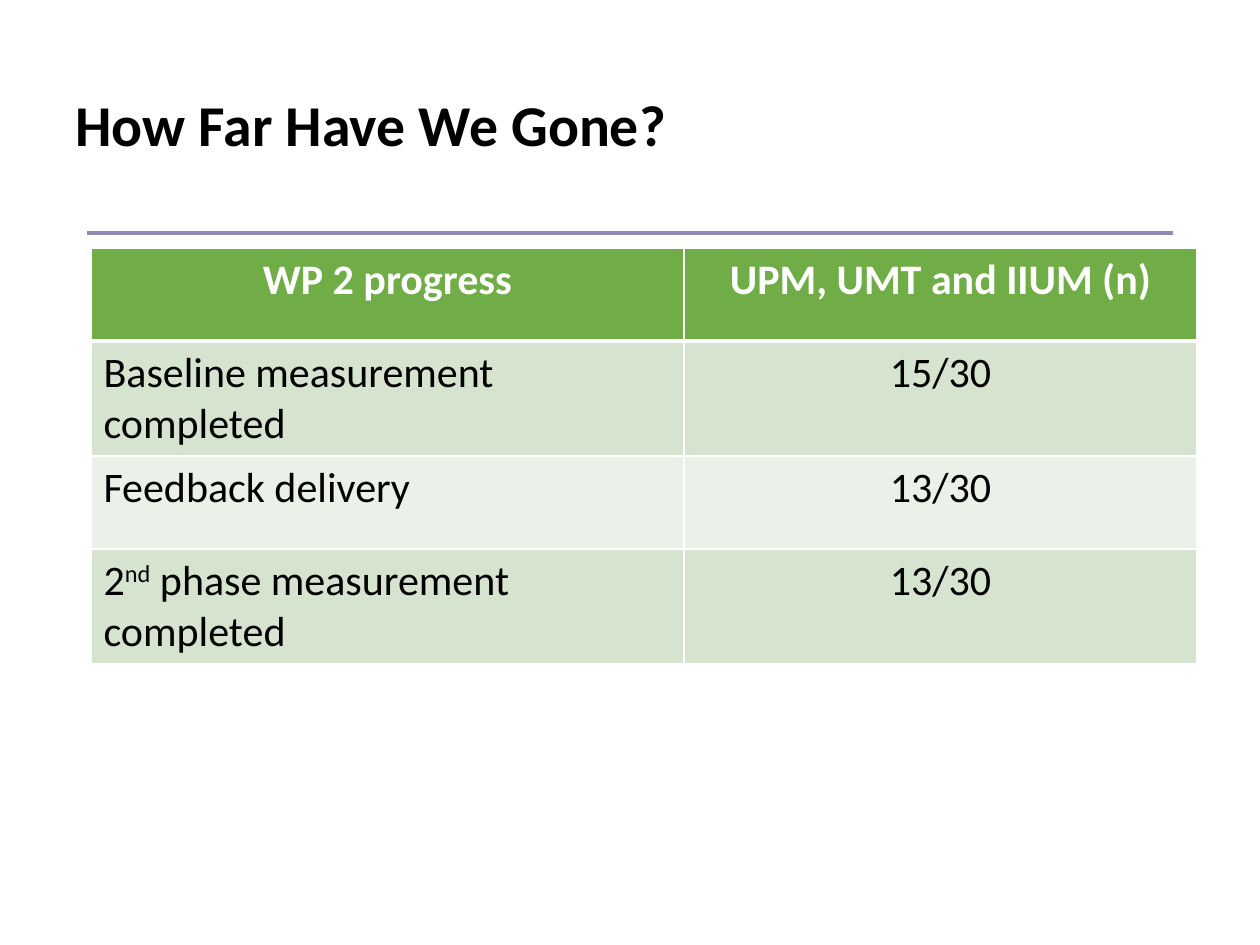
from lxml.etree import SubElement
from pptx import Presentation
from pptx.dml.color import RGBColor
from pptx.enum.shapes import MSO_CONNECTOR
from pptx.enum.text import MSO_ANCHOR, PP_ALIGN
from pptx.oxml.ns import qn
from pptx.util import Pt

SCALE = 914400 / 126
BLACK = RGBColor(0x00, 0x00, 0x00)
WHITE = RGBColor(0xFF, 0xFF, 0xFF)
GREEN = RGBColor(0x70, 0xAD, 0x47)
SAGE = RGBColor(0xD5, 0xE3, 0xCF)
PALE = RGBColor(0xEB, 0xF1, 0xE9)
MAUVE = RGBColor(0x8D, 0x8D, 0xB4)

ROWS = [
    (["WP 2 progress"], ["UPM, UMT and IIUM (n)"]),
    (["Baseline measurement completed"], ["15/30"]),
    (["Feedback delivery"], ["13/30"]),
    (["2", "nd", " phase measurement completed"], ["13/30"]),
]


def px(n):
    return round(n * SCALE)


def write(frame, parts, size=24, color=BLACK, bold=False,
          align=PP_ALIGN.LEFT, lead=None):
    para = frame.paragraphs[0]
    para.alignment = align
    if lead:
        para.line_spacing = lead
    for part in parts:
        run = para.add_run()
        run.text = part
        font = run.font
        font.name = "Calibri"
        font.size = Pt(size)
        font.bold = bold
        font.color.rgb = color
        if part == "nd":
            run._r.get_or_add_rPr().set("baseline", "30000")


def add_title(slide):
    title = slide.shapes.title
    title.left, title.top = px(63), px(93)
    title.width, title.height = px(1134), px(69)
    frame = title.text_frame
    frame.vertical_anchor = MSO_ANCHOR.MIDDLE
    write(frame, ["How Far Have We Gone?"], size=33, bold=True, lead=0.9)


def add_rule(slide):
    rule = slide.shapes.add_connector(
        MSO_CONNECTOR.STRAIGHT, px(87), px(233), px(1173), px(233))
    rule.line.color.rgb = MAUVE
    rule.line.width = Pt(2.25)
    SubElement(rule._element.spPr, qn("a:effectLst"))


def add_edge(cell, side, width):
    line = SubElement(cell._tc.get_or_add_tcPr(), qn("a:ln" + side),
                      w=str(Pt(width)))
    fill = SubElement(line, qn("a:solidFill"))
    SubElement(fill, qn("a:srgbClr"), val=str(WHITE))


def fill_cell(cell, parts, row, col):
    head = row == 0
    for side in "LRTB":
        thick = (row, side) in ((0, "B"), (1, "T"))
        add_edge(cell, side, 3 if thick else 1)
    cell.fill.solid()
    cell.fill.fore_color.rgb = GREEN if head else SAGE if row % 2 else PALE
    write(cell.text_frame, parts, bold=head, color=WHITE if head else BLACK,
          align=PP_ALIGN.CENTER if head or col else PP_ALIGN.LEFT)


def add_grid(slide):
    wide, high = (593, 513), 93
    grid = slide.shapes.add_table(
        len(ROWS), len(wide), px(91), px(248),
        px(sum(wide)), px(high * len(ROWS))).table
    for col, width in zip(grid.columns, wide):
        col.width = px(width)
    for r, texts in enumerate(ROWS):
        grid.rows[r].height = px(high)
        for c, parts in enumerate(texts):
            fill_cell(grid.cell(r, c), parts, r, c)


def main():
    deck = Presentation()
    deck.slide_width, deck.slide_height = px(1260), px(945)
    slide = deck.slides.add_slide(deck.slide_layouts[5])
    add_rule(slide)
    add_title(slide)
    add_grid(slide)
    deck.save("out.pptx")


if __name__ == "__main__":
    main()
